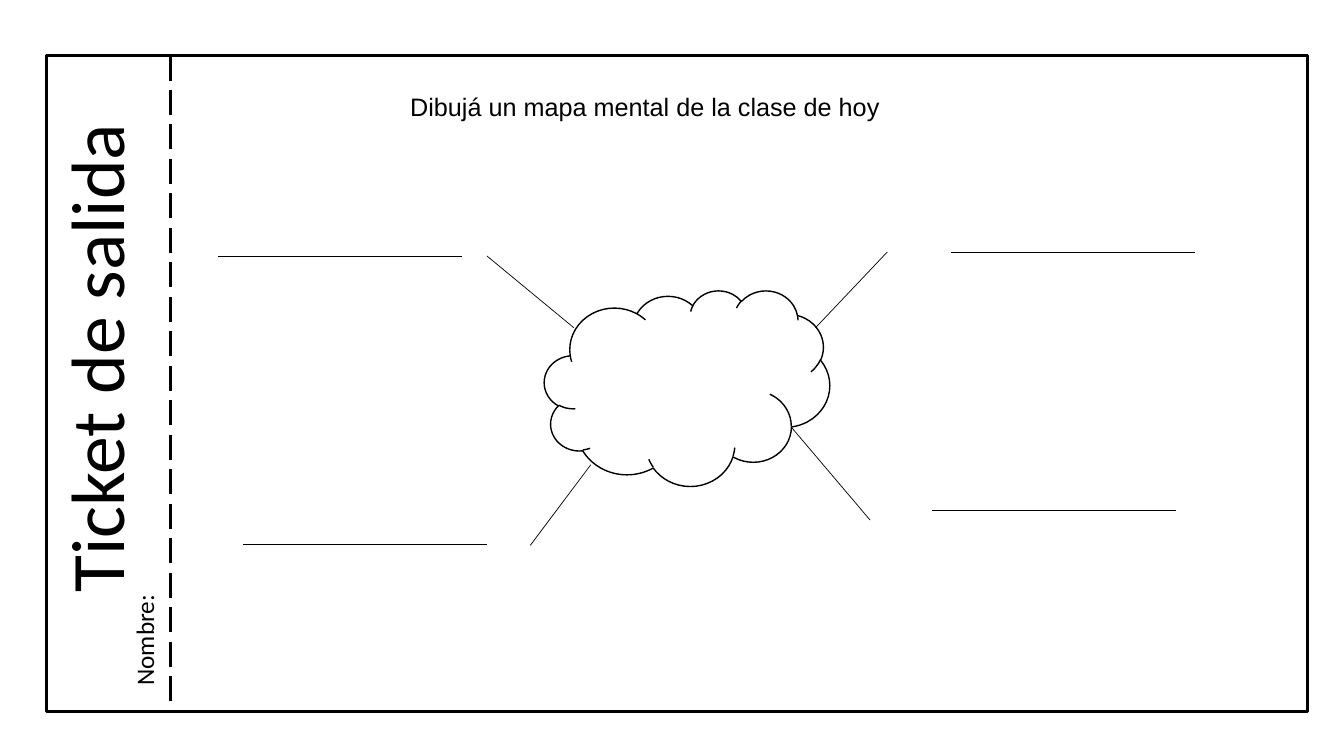
from pptx import Presentation
from pptx.dml.color import RGBColor
from pptx.enum.dml import MSO_LINE
from pptx.enum.shapes import MSO_CONNECTOR, MSO_SHAPE
from pptx.enum.text import MSO_AUTO_SIZE
from pptx.oxml.ns import qn
from pptx.util import Inches, Pt
from lxml import etree

STRAIGHT = MSO_CONNECTOR.STRAIGHT
RECTANGLE = MSO_SHAPE.RECTANGLE
CLOUD = MSO_SHAPE.CLOUD
LONG_DASH = MSO_LINE.LONG_DASH
FIT_SHAPE = MSO_AUTO_SIZE.SHAPE_TO_FIT_TEXT

COLORS = {"ink": "000000"}
INK = RGBColor.from_string(COLORS["ink"])
BORDER_WIDTH = 2.25
STUB_WIDTH = 1.23
ANSWER_LENGTH = 2.42


def add_line(slide, start, end, width=0.5, dash=None):
    """Draw a straight line between two points given in inches."""
    line = slide.shapes.add_connector(
        STRAIGHT, *(Inches(value) for value in (*start, *end)))
    line.line.color.rgb = INK
    line.line.width = Pt(width)
    if dash is not None:
        line.line.dash_style = dash
    etree.SubElement(line._element.spPr, qn("a:effectLst"))


def add_outline(slide, kind, box, width):
    """Draw an unfilled shape with an ink outline."""
    shape = slide.shapes.add_shape(kind, *(Inches(value) for value in box))
    shape.shadow.inherit = False
    shape.fill.background()
    shape.line.color.rgb = INK
    shape.line.width = Pt(width)


def add_label(slide, box, text, font, size, rotation=0):
    """Write one line of text in a box, turned about its centre."""
    label = slide.shapes.add_textbox(*(Inches(value) for value in box))
    label.rotation = rotation
    frame = label.text_frame
    frame.word_wrap = True
    frame.auto_size = FIT_SHAPE
    run = frame.paragraphs[0].add_run()
    run.text = text
    run.font.name = font
    run.font.size = Pt(size)
    run.font.color.rgb = INK


def add_ticket_stub(slide, box):
    """Place the dashed tear line, frame and sideways labels of the ticket."""
    left, top, width, height = box
    tear = left + STUB_WIDTH
    add_line(slide, (tear, top), (tear, top + height), BORDER_WIDTH, LONG_DASH)
    add_outline(slide, RECTANGLE, box, BORDER_WIDTH)
    add_label(slide, (left - 1.96, top + 2.48, 4.88, 1.01),
              "Ticket de salida", "Calibri", 54, 270)
    add_label(slide, (left - 1.86, top + 3.32, 5.66, 0.4),
              "Nombre:", "Calibri", 18, 270)


def add_mind_map(slide, box):
    """Place the prompt, the cloud, its branches and the answer lines."""
    left, top = box[:2]
    add_label(slide, (left + 2.28, top + 0.31, 6.24, 0.4),
              "Dibujá un mapa mental de la clase de hoy", "Arial", 18)
    add_outline(slide, CLOUD, (left + 3.71, top + 2.33, 2.83, 1.94), 1)
    branches = [
        ((6.4, 2.7), (7.11, 1.95)),
        ((6.16, 3.69), (6.94, 4.61)),
        ((3.14, 1.99), (4, 2.7)),
        ((3.57, 4.86), (4.17, 4.06)),
    ]
    for (start_x, start_y), (end_x, end_y) in branches:
        add_line(slide, (left + start_x, top + start_y),
                 (left + end_x, top + end_y))
    answers = [(7.74, 1.95), (7.55, 4.51), (0.47, 1.99), (0.72, 4.85)]
    for x, y in answers:
        add_line(slide, (left + x, top + y),
                 (left + x + ANSWER_LENGTH, top + y))


def main():
    """Build the exit ticket slide and save it."""
    presentation = Presentation()
    presentation.slide_width = Inches(13.33)
    presentation.slide_height = Inches(7.5)
    slide = presentation.slides.add_slide(presentation.slide_layouts[6])
    left, top, width, height = ticket = (0.46, 0.55, 12.51, 6.51)
    add_ticket_stub(slide, ticket)
    add_mind_map(slide, (left + STUB_WIDTH, top, width - STUB_WIDTH, height))
    presentation.save("out.pptx")


if __name__ == "__main__":
    main()
